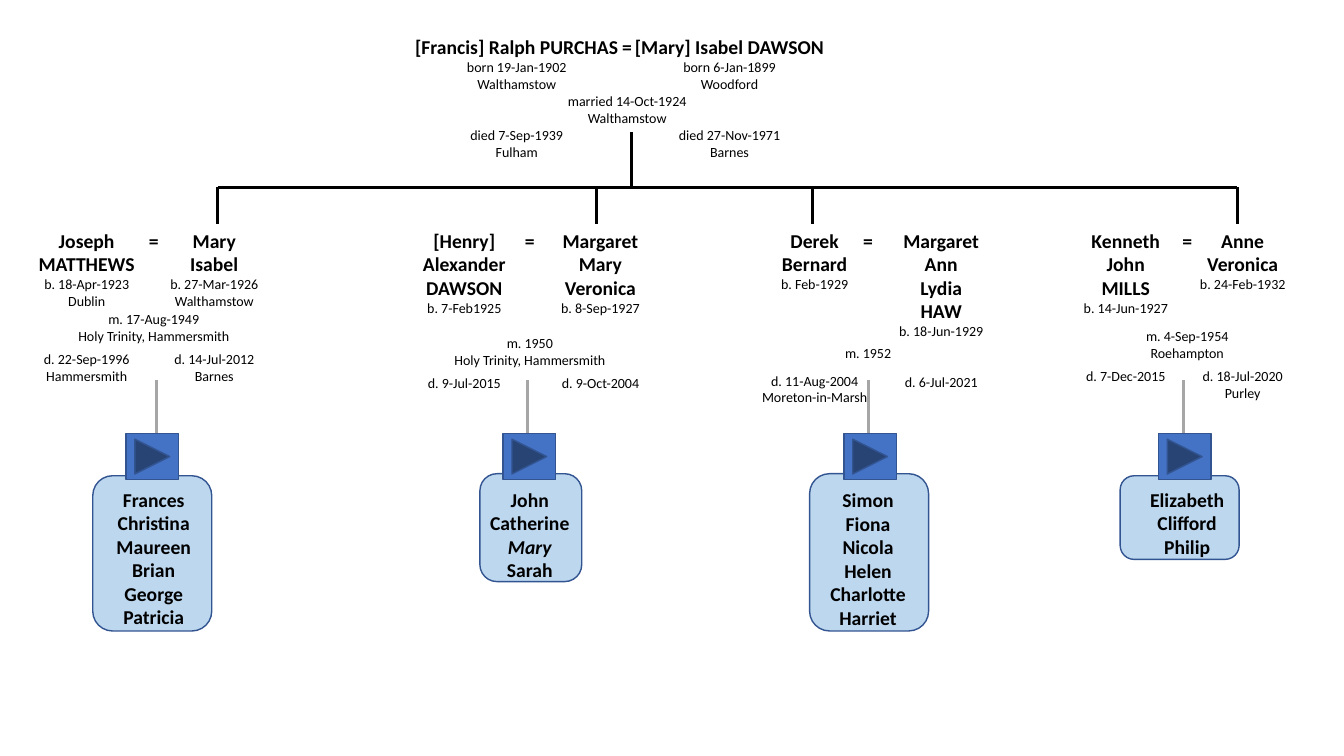
"""Build a one-page family tree of a couple, their four children and grandchildren."""
from dataclasses import dataclass

from lxml.etree import SubElement
from pptx import Presentation
from pptx.dml.color import RGBColor
from pptx.enum.shapes import MSO_CONNECTOR, MSO_SHAPE
from pptx.enum.text import MSO_AUTO_SIZE, PP_ALIGN
from pptx.oxml.ns import qn
from pptx.util import Inches, Pt

BLACK, GREY = "000000", "A6A6A6"
BOX_FILL, BUTTON_FILL, OUTLINE = "BDD7EE", "4472C4", "325491"
STYLES = {
    "name": {"size": Pt(14), "bold": True, "italic": False},
    "italic name": {"size": Pt(14), "bold": True, "italic": True},
    "detail": {"size": Pt(10), "bold": False, "italic": False},
}
PARENT_TOP, FAMILY_TOP = 0.3, 2.22
BAR_Y, STEM_TOP = 1.86, 1.31
LINK_TOP, LINK_BOTTOM = 3.77, 4.7
BUTTON_TOP, BUTTON_WIDTH, BUTTON_HEIGHT = 4.3, 0.52, 0.46


@dataclass
class Column:
    """Centred text: blocks are (style, points above, lines)."""
    left: float
    width: float
    height: float
    blocks: list


@dataclass
class Family:
    """A couple with its connecting lines, button and box of children."""
    drop_x: float
    link_x: float
    button_left: float
    children_box: tuple
    columns: list


PARENTS = [
    Column(6.19, 2.09, 1.35, [
        ("name", 0, ["[Mary] Isabel DAWSON"]),
        ("detail", 0, ["born 6-Jan-1899", "Woodford"]),
        ("detail", 24.4, ["died 27-Nov-1971", "Barnes"])]),
    Column(5.52, 1.4, 1.01, [
        ("name", 0, ["="]),
        ("detail", 24.4, ["married 14-Oct-1924", "Walthamstow"])]),
    Column(4.01, 2.23, 1.51, [
        ("name", 0, ["[Francis] Ralph PURCHAS"]),
        ("detail", 0, ["born 19-Jan-1902", "Walthamstow"]),
        ("detail", 24.4, ["died 7-Sep-1939", "Fulham"])]),
]

FAMILIES = [
    Family(12.27, 11.74, 11.49, (11.11, 4.72, 1.18, 0.83), [
        Column(10.64, 1.05, 1.65, [
            ("name", 0, ["Kenneth", "John", "MILLS"]),
            ("detail", 0, ["b. 14-Jun-1927"]),
            ("detail", 36.7, ["d. 7-Dec-2015"])]),
        Column(11.26, 1.03, 3.37, [
            ("name", 0, ["="]),
            ("detail", 53.7, ["m. 4-Sep-1954", "Roehampton"]),
            ("name", 90.4, ["Elizabeth", "Clifford", "Philip"])]),
        Column(11.79, 1.07, 1.82, [
            ("name", 0, ["Anne", "Veronica"]),
            ("detail", 0, ["b. 24-Feb-1932"]),
            ("detail", 53.8, ["d. 18-Jul-2020", "Purley"])])]),
    Family(8.06, 8.61, 8.37, (8.03, 4.7, 1.18, 1.56), [
        Column(7.45, 1.26, 1.86, [
            ("name", 0, ["Derek", "Bernard"]),
            ("detail", 0, ["b. Feb-1929"]),
            ("detail", 56.8, ["d. 11-Aug-2004", "Moreton-in-Marsh"])]),
        Column(8.13, 0.96, 4.08, [
            ("name", 0, ["="]),
            ("detail", 65.9, ["m. 1952"]),
            ("name", 90.4, ["Simon", "Fiona", "Nicola", "Helen", "Charlotte", "Harriet"])]),
        Column(8.81, 1.05, 1.72, [
            ("name", 0, ["Margaret", "Ann", "Lydia", "HAW"]),
            ("detail", 0, ["b. 18-Jun-1929"]),
            ("detail", 24.4, ["d. 6-Jul-2021"])])]),
    Family(5.92, 5.23, 4.99, (4.76, 4.7, 1.01, 1.07), [
        Column(4.09, 1.03, 1.72, [
            ("name", 0, ["[Henry]", "Alexander", "DAWSON"]),
            ("detail", 0, ["b. 7-Feb1925"]),
            ("detail", 41.6, ["d. 9-Jul-2015"])]),
        Column(4.37, 1.77, 3.84, [
            ("name", 0, ["="]),
            ("detail", 58.6, ["m. 1950", "Holy Trinity, Hammersmith"]),
            ("name", 85.4, ["John", "Catherine"]),
            ("italic name", 0, ["Mary"]),
            ("name", 0, ["Sarah"])]),
        Column(5.46, 0.99, 1.72, [
            ("name", 0, ["Margaret", "Mary", "Veronica"]),
            ("detail", 0, ["b. 8-Sep-1927"]),
            ("detail", 41.6, ["d. 9-Oct-2004"])])]),
    Family(2.16, 1.55, 1.25, (0.92, 4.72, 1.18, 1.54), [
        Column(0.28, 1.16, 1.65, [
            ("name", 0, ["Joseph", "MATTHEWS"]),
            ("detail", 0, ["b. 18-Apr-1923", "Dublin"]),
            ("detail", 29.4, ["d. 22-Sep-1996", "Hammersmith"])]),
        Column(0.64, 1.77, 4.08, [
            ("name", 0, ["="]),
            ("detail", 41.5, ["m. 17-Aug-1949", "Holy Trinity, Hammersmith"]),
            ("name", 102.6, ["Frances", "Christina", "Maureen", "Brian", "George", "Patricia"])]),
        Column(1.58, 1.09, 1.65, [
            ("name", 0, ["Mary", "Isabel"]),
            ("detail", 0, ["b. 27-Mar-1926", "Walthamstow"]),
            ("detail", 29.4, ["d. 14-Jul-2012", "Barnes"])])]),
]


def colour(value):
    return RGBColor.from_string(value)


def add_panel(page, kind, at, fill):
    panel = page.shapes.add_shape(kind, *map(Inches, at))
    panel.shadow.inherit = False
    panel.fill.solid()
    panel.fill.fore_color.rgb = colour(fill)
    panel.line.color.rgb = colour(OUTLINE)
    panel.line.width = Pt(1)


def add_line(page, start, end, line_colour=BLACK):
    line = page.shapes.add_connector(MSO_CONNECTOR.STRAIGHT, *map(Inches, start + end))
    line.line.color.rgb = colour(line_colour)
    line.line.width = Pt(2.25)
    SubElement(line._element.spPr, qn("a:effectLst"))


def add_paragraph(para, text, style, gap):
    para.alignment = PP_ALIGN.CENTER
    para.space_before = Pt(gap)
    span = para.add_run()
    span.text = text
    span.font.name = "Calibri"
    span.font.color.rgb = colour(BLACK)
    for attribute, value in STYLES[style].items():
        setattr(span.font, attribute, value)


def add_column(group, column, top):
    box = group.shapes.add_textbox(*map(Inches, (column.left, top, column.width, column.height)))
    frame = box.text_frame
    frame.word_wrap = False
    frame.auto_size = MSO_AUTO_SIZE.SHAPE_TO_FIT_TEXT
    para = frame.paragraphs[0]
    for style, gap, lines in column.blocks:
        for index, text in enumerate(lines):
            if para.runs:
                para = frame.add_paragraph()
            add_paragraph(para, text, style, 0 if index else gap)


def add_couple(page, columns, top):
    group = page.shapes.add_group_shape()
    for column in columns:
        add_column(group, column, top)


def main():
    deck = Presentation()
    deck.slide_width, deck.slide_height = Inches(13.33), Inches(7.5)
    page = deck.slides.add_slide(deck.slide_layouts[6])
    for family in FAMILIES:
        add_panel(page, MSO_SHAPE.ROUNDED_RECTANGLE, family.children_box, BOX_FILL)
    add_couple(page, PARENTS, PARENT_TOP)
    add_line(page, (6.26, BAR_Y), (6.26, STEM_TOP))
    for family in FAMILIES:
        add_couple(page, family.columns, FAMILY_TOP)
        add_line(page, (family.drop_x, BAR_Y), (family.drop_x, FAMILY_TOP))
        add_line(page, (family.link_x, LINK_TOP), (family.link_x, LINK_BOTTOM), GREY)
        add_panel(page, MSO_SHAPE.ACTION_BUTTON_FORWARD_OR_NEXT,
                  (family.button_left, BUTTON_TOP, BUTTON_WIDTH, BUTTON_HEIGHT), BUTTON_FILL)
    add_line(page, (FAMILIES[-1].drop_x, BAR_Y), (FAMILIES[0].drop_x, BAR_Y))
    deck.save("out.pptx")


if __name__ == "__main__":
    main()
